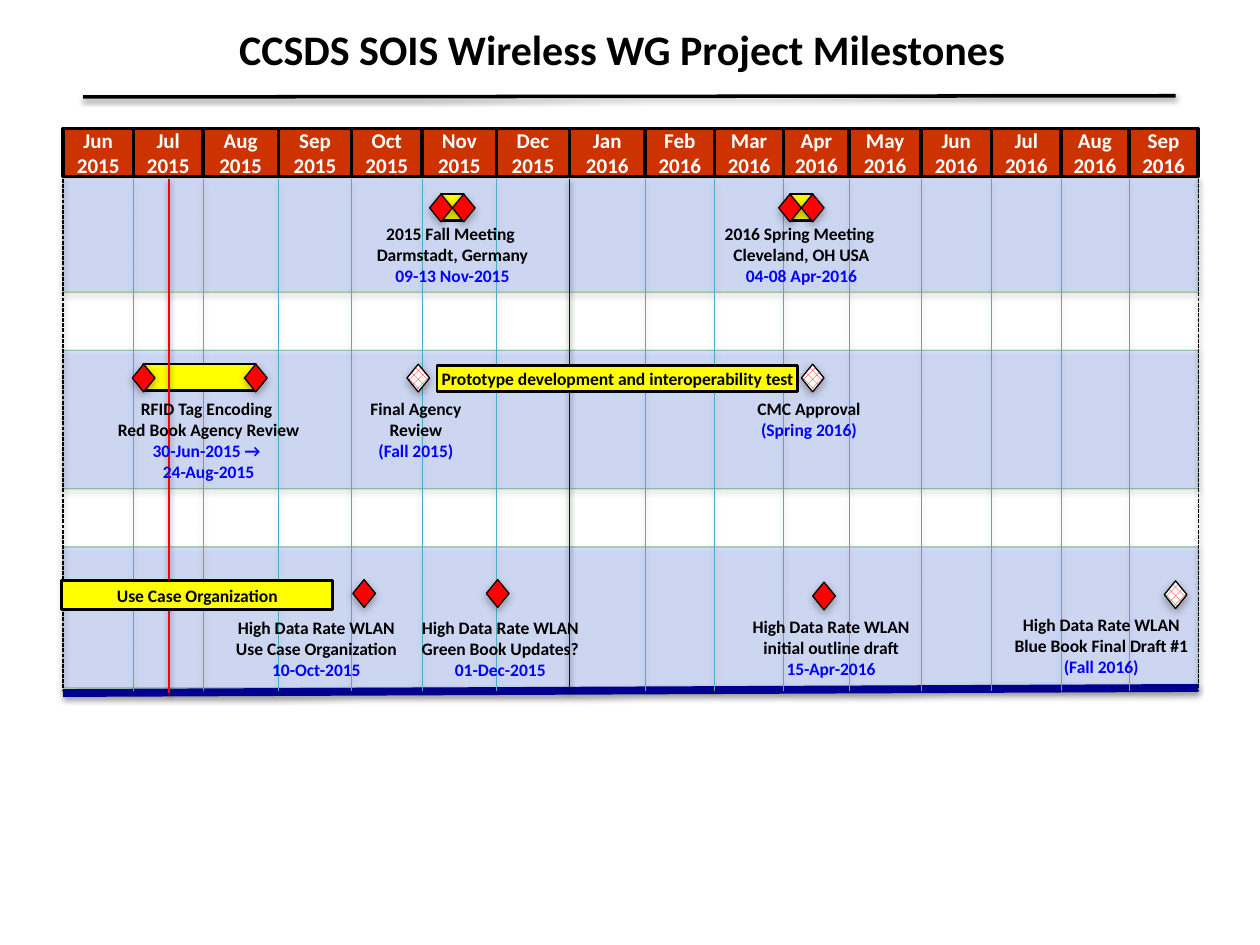
"""Build the project milestones timeline slide."""
from itertools import pairwise

from lxml import etree
from pptx import Presentation
from pptx import util as u
from pptx.dml.color import RGBColor
from pptx.enum import dml, shapes, text
from pptx.oxml.ns import qn

BLACK = RGBColor(0, 0, 0)
WHITE = RGBColor(255, 255, 255)
RED = RGBColor(255, 0, 0)
BLUE = RGBColor(0, 0, 255)
NAVY = RGBColor(0, 0, 0x90)
TEAL = RGBColor(0x4B, 0xAC, 0xC6)
RUST = RGBColor(0xCC, 0x33, 0)
YELLOW = RGBColor(255, 255, 0)
BAND = RGBColor(0x33, 0x66, 255)
GREEN = RGBColor(0, 0x80, 0)

TITLE = "CCSDS SOIS Wireless WG Project Milestones"
MONTHS = [(name, year) for year, names in (
    ("2015", "Jun Jul Aug Sep Oct Nov Dec"),
    ("2016", "Jan Feb Mar Apr May Jun Jul Aug Sep")) for name in names.split()]
EDGES = [0.5, 1.06, 1.61, 2.21, 2.79, 3.35, 3.94, 4.52, 5.12,
         5.67, 6.22, 6.74, 7.31, 7.87, 8.42, 8.96, 9.51]
HEAD, HIGH, BODY, FOOT = 1.02, 0.38, 1.42, 5.48
BANDS = [(1.41, 0.91), (2.78, 1.1), (4.34, 1.12)]
SPANS = [(3.5, 3.68, 1.54), (6.27, 6.45, 1.54), (1.14, 2.03, 2.89)]
DONE = [(2.89, 4.71), (3.95, 4.71), (6.54, 4.73)]
PLANS = [(3.32, 3.0), (6.45, 3.0), (9.33, 4.72)]
TASKS = [("Prototype development and interoperability test", 3.47, 2.9, 2.86, 0.21),
         ("Use Case Organization", 0.49, 4.61, 2.15, 0.23)]
NOTES = [
    (2.88, 1.72, 1.42, ["2015 Fall Meeting ", "Darmstadt, Germany"], ["09-13 Nov-2015"]),
    (5.65, 1.72, 1.42, ["2016 Spring Meeting ", "Cleveland, OH USA"], ["04-08 Apr-2016"]),
    (0.74, 3.11, 1.83, ["RFID Tag Encoding ", "Red Book Agency Review"],
     ["30-Jun-2015 → ", "24-Aug-2015"]),
    (2.64, 3.11, 1.32, ["Final Agency Review"], ["(Fall 2015)"]),
    (5.76, 3.11, 1.32, ["CMC Approval"], ["(Spring 2016)"]),
    (1.75, 4.85, 1.52, ["High Data Rate WLAN", "Use Case Organization"], ["10-Oct-2015"]),
    (3.17, 4.85, 1.6, ["High Data Rate WLAN", "Green Book Updates?"], ["01-Dec-2015"]),
    (5.72, 4.84, 1.75, ["High Data Rate WLAN", "initial outline draft"], ["15-Apr-2016"]),
    (7.87, 4.82, 1.74, ["High Data Rate WLAN", "Blue Book Final Draft #1"], ["(Fall 2016)"]),
]

deck = Presentation()
deck.slide_width, deck.slide_height = u.Inches(10), u.Inches(7.5)
slide = deck.slides.add_slide(deck.slide_layouts[6])
tree = slide.shapes


def inches(*sizes):
    return [u.Inches(size) for size in sizes]


def sheer(part, share):
    for tint in part.iter(qn("a:srgbClr")):
        etree.SubElement(tint, qn("a:alpha"), val=str(share * 1000))


def shade(item, share, blur, drop):
    group = etree.SubElement(item._element.spPr, qn("a:effectLst"))
    cast = etree.SubElement(group, qn("a:outerShdw"), blurRad=str(u.Pt(blur)),
                            dist=str(u.Pt(drop)), dir="5400000", rotWithShape="0")
    etree.SubElement(cast, qn("a:srgbClr"), val="000000")
    sheer(cast, share)


def rule(start, end, color, width, dash=None):
    line = tree.add_connector(shapes.MSO_CONNECTOR.STRAIGHT, *inches(*start, *end))
    line.line.color.rgb, line.line.width = color, u.Pt(width)
    if dash:
        line.line.dash_style = dash
    shade(line, 38, 3.1, 1.6)


def block(kind, box, fill, edge, width):
    item = tree.add_shape(kind, *inches(*box))
    item.fill.solid()
    item.fill.fore_color.rgb = fill
    item.line.color.rgb, item.line.width = edge, u.Pt(width)
    return item


def bar(box, fill=YELLOW, width=1.5):
    item = block(shapes.MSO_SHAPE.RECTANGLE, box, fill, BLACK, width)
    item.shadow.inherit = False
    return item


def gem(x, y, plan=False):
    item = block(shapes.MSO_SHAPE.DIAMOND, (x - 0.09, y - 0.11, 0.18, 0.22),
                 RED, BLACK, 0.75)
    if plan:
        item.fill.patterned()
        item.fill.pattern = dml.MSO_PATTERN.PERCENT_50
        item.fill.fore_color.rgb, item.fill.back_color.rgb = RED, WHITE
    shade(item, 35, 5, 1.8)


def write(item, lines, size, colors, wrap=False, align=text.PP_ALIGN.CENTER):
    frame = item.text_frame
    frame.text = "\n".join(lines)
    frame.word_wrap = wrap
    for para, color in zip(frame.paragraphs, colors):
        para.alignment = align
        font = para.runs[0].font
        font.name, font.size, font.bold = "Calibri", u.Pt(size), True
        font.color.rgb = color


def main():
    left, right = EDGES[0], EDGES[-1]
    for top, high in BANDS:
        item = block(shapes.MSO_SHAPE.RECTANGLE, (left, top, right - left, high),
                     BAND, GREEN, 0.75)
        sheer(item._element.spPr.find(qn("a:solidFill")), 18)
        sheer(item._element.spPr.find(qn("a:ln")), 33)
        shade(item, 35, 3.1, 1.8)
    for x in (left, right):
        rule((x, BODY), (x, FOOT), BLACK, 0.75, dml.MSO_LINE.SQUARE_DOT)
    rule((left, 5.5), (right, 5.46), NAVY, 4.5)

    for month, (start, end) in zip(MONTHS, pairwise(EDGES)):
        item = bar((start, HEAD, end - start, HIGH), RUST, 2)
        write(item, month, 12, [WHITE] * 2)
        if month == ("Jan", "2016"):
            rule((start, BODY), (start, FOOT), NAVY, 1)
        elif start > left:
            rule((start, BODY), (start, FOOT), TEAL, 0.25, dml.MSO_LINE.ROUND_DOT)

    for start, end, top in SPANS:
        bar((start, top, end - start, 0.21))
        for x in (end, start):
            gem(x, top + 0.11)
    for spot in DONE:
        gem(*spot)
    for spot in PLANS:
        gem(*spot, plan=True)
    rule((1.34, BODY), (1.34, 5.5), RED, 1)
    for label, *box in TASKS:
        write(bar(box), [label], 10, [BLACK])

    for x, y, wide, names, dates in NOTES:
        lines = names + dates
        item = tree.add_textbox(*inches(x, y, wide, 0.1 + 0.17 * len(lines)))
        write(item, lines, 10, [BLACK] * len(names) + [BLUE] * len(dates), True)

    head = tree.add_textbox(*inches(1.8, 0.14, 6.36, 0.5))
    write(head, [TITLE], 24, [BLACK], align=text.PP_ALIGN.LEFT)
    rule((0.66, 0.77), (9.33, 0.76), BLACK, 2)
    deck.save("out.pptx")


if __name__ == "__main__":
    main()
